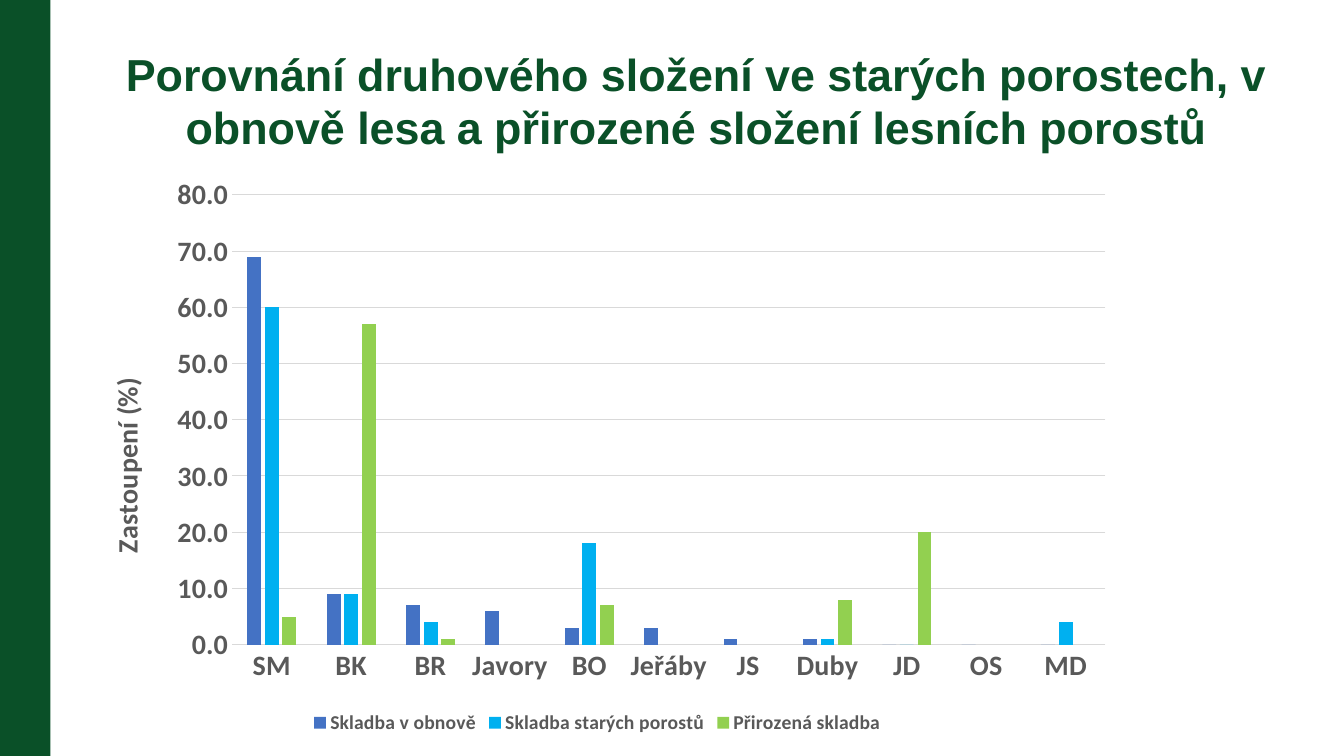
import pptx
import pptx.util
import pptx.chart.data
import pptx.dml.color
import pptx.enum.chart
import pptx.enum.shapes
import pptx.enum.text
import pptx.oxml

CELL = pptx.util.Inches(1)
COLUMNS, ROWS = 13.33, 7.5
COLORS = {"green": "0A5028", "text": "595959", "grid": "D9D9D9"}
SPECIES = ["SM", "BK", "BR", "Javory", "BO", "Jeřáby", "JS", "Duby", "JD", "OS", "MD"]
SERIES = [
    ("Skladba v obnově", "4472C4", [69, 9, 7, 6, 3, 3, 1, 1, 0, 0, 0]),
    ("Skladba starých porostů", "00B0F0",
     [60, 9, 4, None, 18, None, None, 1, 0, None, 4]),
    ("Přirozená skladba", "92D050",
     [5, 57, 1, None, 7, None, None, 8, 20, None, None]),
]


def rgb(value):
    return pptx.dml.color.RGBColor.from_string(value)


def box(*cells):
    """Turn columns and rows of the grid into lengths."""
    return [int(n * CELL) for n in cells]


def set_attrs(target, values):
    for name, value in values.items():
        setattr(target, name, value)


def style_font(font, size, color, name="Calibri"):
    set_attrs(font, {"size": pptx.util.Pt(size), "bold": True, "name": name})
    font.color.rgb = rgb(color)


def style_line(line, color):
    line.width = pptx.util.Pt(0.75)
    line.color.rgb = rgb(color)


def set_layout(parent, percents, inner=False):
    """Place a chart part by percentages of the chart's size."""
    ns = "http://schemas.openxmlformats.org/drawingml/2006/chart"
    target = '<c:layoutTarget val="inner"/>' if inner else ""
    modes = "".join(f'<c:{k}Mode val="edge"/>' for k in "xy")
    sizes = "".join(f'<c:{k} val="{v / 100:.4f}"/>' for k, v in percents.items())
    layout = pptx.oxml.parse_xml(
        f'<c:layout xmlns:c="{ns}"><c:manualLayout>{target}{modes}{sizes}'
        "</c:manualLayout></c:layout>")
    for old in parent.findall(f"{{{ns}}}layout"):
        parent.remove(old)
    tx = parent.find(f"{{{ns}}}tx")
    parent.insert(0 if tx is None else 1, layout)


def add_band(s):
    sp = s.shapes.add_shape(pptx.enum.shapes.MSO_SHAPE.RECTANGLE, *box(0, 0, 0.5, ROWS))
    sp.shadow.inherit = False
    sp.fill.solid()
    sp.fill.fore_color.rgb = rgb(COLORS["green"])
    sp.line.fill.background()


def add_title(s, text):
    tf = s.shapes.add_textbox(*box(0.97, 0.46, 11.88, 0.68)).text_frame
    set_attrs(tf, {"word_wrap": True, "margin_left": 0, "margin_right": 0,
                   "margin_top": 0, "margin_bottom": 0})
    p = tf.paragraphs[0]
    p.alignment = pptx.enum.text.PP_ALIGN.CENTER
    r = p.add_run()
    r.text = text
    style_font(r.font, 32, COLORS["green"], "Arial")


def style_axis(axis):
    none = pptx.enum.chart.XL_TICK_MARK.NONE
    set_attrs(axis, {"major_tick_mark": none, "minor_tick_mark": none})
    style_font(axis.tick_labels.font, 20, COLORS["text"])


def add_species_chart(s):
    data = pptx.chart.data.CategoryChartData(number_format="0.0")
    data.categories = SPECIES
    for name, _, values in SERIES:
        data.add_series(name, values)
    chart = s.shapes.add_chart(pptx.enum.chart.XL_CHART_TYPE.COLUMN_CLUSTERED,
                               *box(0.72, 1.42, 10.41, 5.91), data).chart
    set_attrs(chart.font, {"size": pptx.util.Pt(10), "name": "Arial"})
    chart.has_title = False

    # Columns
    plot = chart.plots[0]
    set_attrs(plot, {"gap_width": 219, "overlap": -27, "vary_by_categories": False})
    for series, (_, color, _) in zip(plot.series, SERIES):
        series.format.fill.solid()
        series.format.fill.fore_color.rgb = rgb(color)
    area = chart._chartSpace.chart.plotArea
    set_layout(area, {"x": 15.2, "y": 8.7, "w": 83.2, "h": 75.5}, inner=True)

    # Axes
    style_axis(chart.category_axis)
    style_line(chart.category_axis.format.line, COLORS["grid"])
    axis = chart.value_axis
    style_axis(axis)
    set_attrs(axis, {"minimum_scale": 0, "maximum_scale": 80, "major_unit": 10})
    set_attrs(axis.tick_labels, {"number_format": "0.0", "number_format_is_linked": False})
    axis.format.line.fill.background()
    style_line(axis.major_gridlines.format.line, COLORS["grid"])

    # Value axis title
    r = axis.axis_title.text_frame.paragraphs[0].add_run()
    r.text = "Zastoupení (%)"
    style_font(r.font, 20, COLORS["text"])
    set_layout(axis.axis_title._element, {"x": 2.8, "y": 38.5})

    # Legend
    chart.has_legend = True
    set_attrs(chart.legend, {"position": pptx.enum.chart.XL_LEGEND_POSITION.BOTTOM,
                             "include_in_layout": False})
    style_font(chart.legend.font, 14, COLORS["text"])


def main():
    prs = pptx.Presentation()
    width, height = box(COLUMNS, ROWS)
    set_attrs(prs, {"slide_width": width, "slide_height": height})
    s = prs.slides.add_slide(prs.slide_layouts[6])
    add_band(s)
    add_title(s, "Porovnání druhového složení ve starých porostech, v obnově lesa "
                 "a přirozené složení lesních porostů")
    add_species_chart(s)
    prs.save("out.pptx")


if __name__ == "__main__":
    main()
